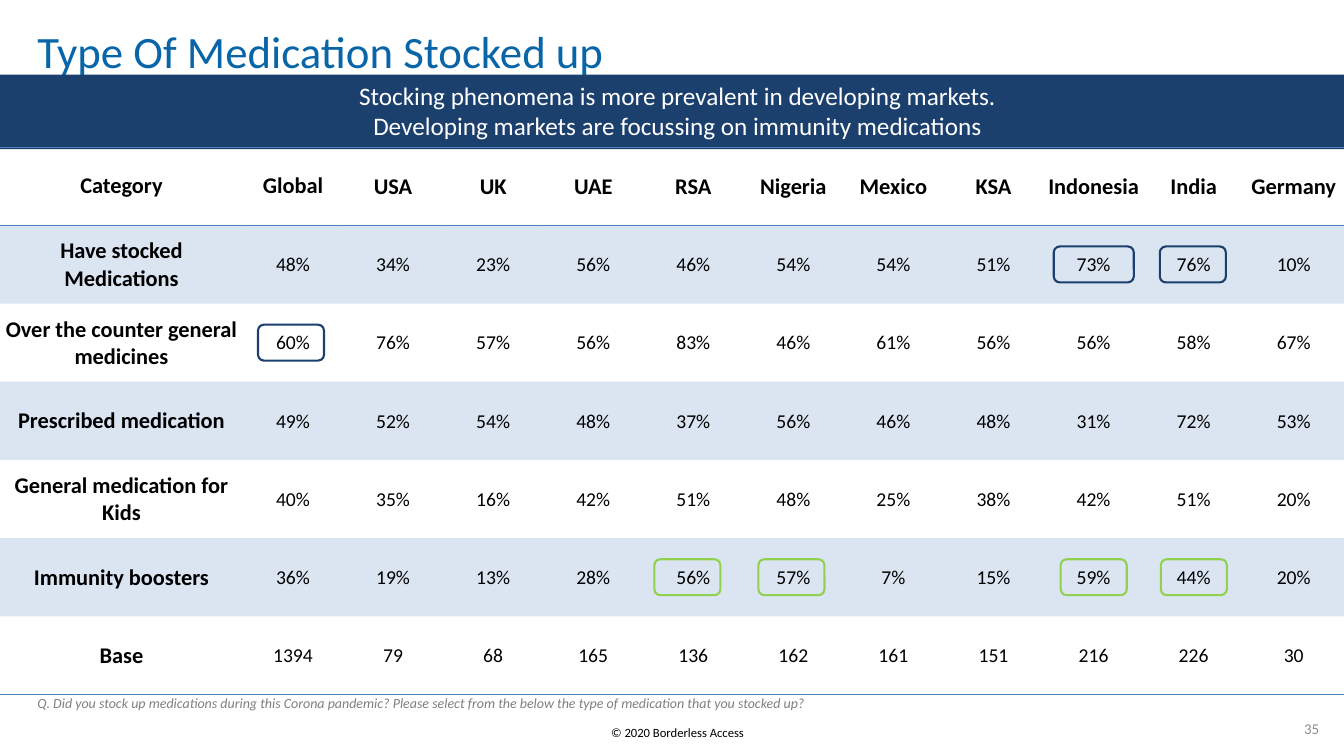
"""Build the slide on the type of medication stocked up in each market."""
import pptx
import pptx.dml.color
import pptx.enum.shapes
import pptx.enum.text
import pptx.oxml
import pptx.util
import lxml.etree

COLORS = {"title": "0866A8", "navy": "1B406D", "green": "92D050", "table": "4F81BD",
          "black": "000000", "white": "FFFFFF", "number": "8C8C8C", "note": "808080"}
DRAWING = "http://schemas.openxmlformats.org/drawingml/2006/main"
NO_STYLE = "{2D5ABB26-0587-4C30-8999-92F81FD0307C}"
Align = pptx.enum.text.PP_ALIGN
Anchor = pptx.enum.text.MSO_ANCHOR
Shape = pptx.enum.shapes.MSO_SHAPE
rgb = pptx.dml.color.RGBColor.from_string

deck = pptx.Presentation()
deck.slide_width = pptx.util.Inches(13.33)
deck.slide_height = pptx.util.Inches(7.5)
page = deck.slides.add_slide(deck.slide_layouts[6])


def share(left, top, width, height):
    """Turn percentages of the slide into lengths."""
    sides = (deck.slide_width, deck.slide_height) * 2
    return [round(side * part / 100) for side, part in zip(sides, (left, top, width, height))]


def write(frame, lines, color, align, font):
    """Write lines of text in one format."""
    frame.text = "\n".join(lines)
    for para in frame.paragraphs:
        para.alignment = align
        for span in para.runs:
            span.font.color.rgb = rgb(COLORS[color])
            for name, value in {"name": "Calibri", **font}.items():
                setattr(span.font, name, value)


texts = [
    (["© 2020 Borderless Access"], (36.38, 95.2, 28.06, 3.33), "black", Align.CENTER,
     {"size": pptx.util.Pt(9)}, {"word_wrap": True}),
    (["Type Of Medication Stocked up"], (2.78, 4.13, 84.62, 6.13), "title", Align.LEFT,
     {"size": pptx.util.Pt(32)}, {"word_wrap": True, "vertical_anchor": Anchor.MIDDLE}),
    (["35"], (96.92, 95.2, 1.35, 2.4), "number", Align.CENTER,
     {"size": pptx.util.Pt(10.7)}, {"word_wrap": False, "vertical_anchor": Anchor.MIDDLE}),
    (["Stocking phenomena is more prevalent in developing markets.",
      "Developing markets are focussing on immunity medications"],
     (3.15, 10, 94.52, 9.47), "white", Align.CENTER,
     {"size": pptx.util.Pt(18)}, {"word_wrap": True}),
    (["Q. Did you stock up medications during this Corona pandemic? Please select from the "
      "below the type of medication that you stocked up?"],
     (2.78, 91.87, 95.35, 2.27), "note", Align.LEFT,
     {"size": pptx.util.Pt(10), "italic": True},
     {"word_wrap": True, "vertical_anchor": Anchor.BOTTOM}),
]
for lines, area, color, align, font, layout in texts:
    if color == "white":
        band = page.shapes.add_shape(Shape.RECTANGLE, *share(0, 9.87, 100, 9.87))
        band.shadow.inherit = False
        band.fill.solid()
        band.fill.fore_color.rgb = rgb(COLORS["navy"])
        band.line.fill.background()
    box = page.shapes.add_textbox(*share(*area))
    if "vertical_anchor" in layout:
        layout.update(dict.fromkeys(
            ("margin_left", "margin_top", "margin_right", "margin_bottom"), 0))
    for name, value in layout.items():
        setattr(box.text_frame, name, value)
    write(box.text_frame, lines, color, align, font)
    if color == "title":
        box.text_frame.paragraphs[0].line_spacing = 0.85

rows = [
    ["Category", "Global", "USA", "UK", "UAE", "RSA", "Nigeria", "Mexico", "KSA",
     "Indonesia", "India", "Germany"],
    ["Have stocked Medications", "48%", "34%", "23%", "56%", "46%", "54%", "54%", "51%",
     "73%", "76%", "10%"],
    ["Over the counter general medicines", "60%", "76%", "57%", "56%", "83%", "46%", "61%",
     "56%", "56%", "58%", "67%"],
    ["Prescribed medication", "49%", "52%", "54%", "48%", "37%", "56%", "46%", "48%",
     "31%", "72%", "53%"],
    ["General medication for Kids", "40%", "35%", "16%", "42%", "51%", "48%", "25%", "38%",
     "42%", "51%", "20%"],
    ["Immunity boosters", "36%", "19%", "13%", "28%", "56%", "57%", "7%", "15%",
     "59%", "44%", "20%"],
    ["Base", "1394", "79", "68", "165", "136", "162", "161", "151", "216", "226", "30"],
]
table_top, table_height, label_width = 19.47, 72.4, 18.08
row_height = table_height / len(rows)
column_width = (100 - label_width) / (len(rows[0]) - 1)

table = page.shapes.add_table(len(rows), len(rows[0]),
                              *share(0, table_top, 100, table_height)).table
table.first_row = table.horz_banding = False
table._tbl.tblPr.find(f"{{{DRAWING}}}tableStyleId").text = NO_STYLE
for index, column in enumerate(table.columns):
    column.width = share(0, 0, column_width if index else label_width, 0)[2]
for row in table.rows:
    row.height = share(0, 0, 0, row_height)[3]

edges = {0: ("lnB", "lnT"), len(rows) - 1: ("lnB",)}
for row_index, row in enumerate(rows):
    for column_index, value in enumerate(row):
        cell = table.cell(row_index, column_index)
        cell.vertical_anchor = Anchor.MIDDLE
        if row_index or column_index > 1:
            cell.margin_left = cell.margin_top = cell.margin_right = pptx.util.Inches(0.01)
            cell.margin_bottom = 0
        heading = row_index == 0 or column_index == 0
        write(cell.text_frame, [value], "black", Align.CENTER,
              {"size": pptx.util.Pt(16 if heading else 14), "bold": heading})
        properties = cell._tc.get_or_add_tcPr()
        if row_index % 2:
            cell.fill.solid()
            cell.fill.fore_color.rgb = rgb(COLORS["table"])
            tint = next(properties.iter(f"{{{DRAWING}}}srgbClr"))
            lxml.etree.SubElement(tint, f"{{{DRAWING}}}alpha", val="20000")
        else:
            cell.fill.background()
        for edge in edges.get(row_index, ()):
            properties.insert(0, pptx.oxml.parse_xml(
                f'<a:{edge} xmlns:a="{DRAWING}" w="12700"><a:solidFill>'
                f'<a:srgbClr val="{COLORS["table"]}"/></a:solidFill></a:{edge}>'))

markers = [
    (1, 9, 0.8, 0, "navy"), (1, 10, 0.66, -0.01, "navy"), (2, 1, 0.66, -0.02, "navy"),
    (5, 5, 0.66, -0.06, "green"), (5, 6, 0.66, -0.02, "green"),
    (5, 9, 0.66, 0, "green"), (5, 10, 0.66, 0, "green"),
]
marker_height = 0.46
for row_index, column_index, width, shift, color in markers:
    left = label_width + (column_index - 0.5 + shift - width / 2) * column_width
    top = table_top + (row_index + 0.5 - marker_height / 2) * row_height
    marker = page.shapes.add_shape(Shape.ROUNDED_RECTANGLE, *share(
        left, top, width * column_width, marker_height * row_height))
    marker.shadow.inherit = False
    marker.fill.background()
    marker.line.color.rgb = rgb(COLORS[color])
    marker.line.width = pptx.util.Pt(1.5)

deck.save("out.pptx")
